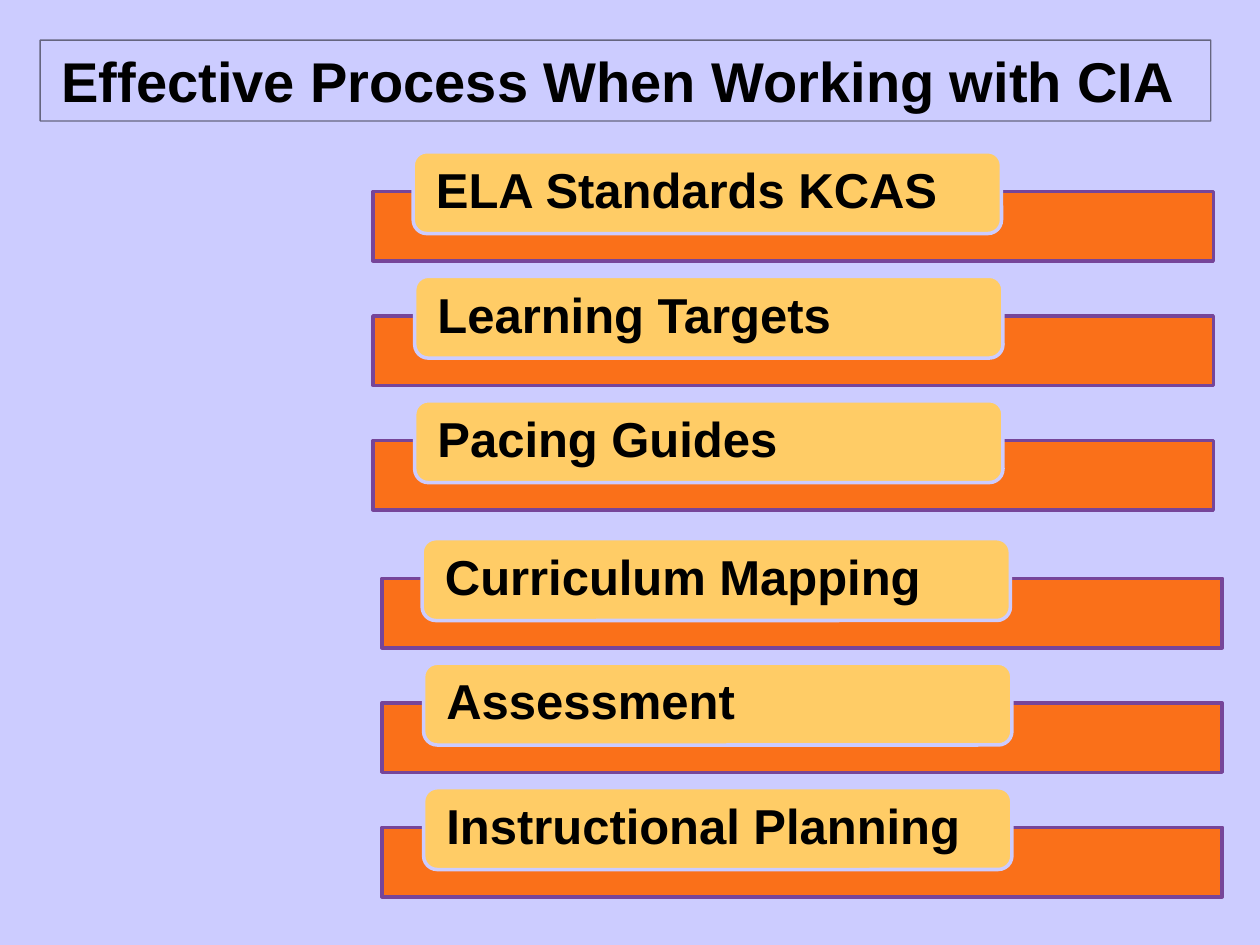
from lxml.etree import SubElement
from pptx import Presentation
from pptx.dml.color import RGBColor
from pptx.enum.shapes import MSO_SHAPE
from pptx.enum.text import MSO_ANCHOR, PP_ALIGN
from pptx.oxml.ns import qn
from pptx.util import Cm, Pt


def paint(color_format, color, opacity=100):
    """Set a colour, with its opacity in percent."""
    color_format.rgb = RGBColor.from_string(color)
    if opacity < 100:
        for element in color_format._xFill.iter(qn("a:srgbClr")):
            SubElement(element, qn("a:alpha"), val=str(opacity * 1000))


def write(shape, text, size):
    """Put one line of bold black Arial in a shape, centred vertically."""
    frame = shape.text_frame
    frame.text = text
    frame.word_wrap = True
    frame.vertical_anchor = MSO_ANCHOR.MIDDLE
    font = frame.paragraphs[0].runs[0].font
    font.name = "Arial"
    font.size = Pt(size)
    font.bold = True
    paint(font.color, "000000")
    return frame


deck = Presentation()
deck.slide_width, deck.slide_height = Cm(25.4), Cm(19.05)
page = deck.slides.add_slide(deck.slide_layouts[6])
page.background.fill.solid()
paint(page.background.fill.fore_color, "CCCCFF")

# Steps: two groups of three, each group with its own left and top
step_groups = [
    (7.52, 3.86, ["ELA Standards KCAS", "Learning Targets", "Pacing Guides"]),
    (7.7, 11.66, ["Curriculum Mapping", "Assessment", "Instructional Planning"]),
]
step_pitch = 2.51

for left, top, steps in step_groups:
    group = page.shapes.add_group_shape()
    for index, step in enumerate(steps):
        bar_top = top + index * step_pitch
        bar = group.shapes.add_shape(
            MSO_SHAPE.RECTANGLE, Cm(left), Cm(bar_top), Cm(16.94), Cm(1.4))
        label = group.shapes.add_shape(
            MSO_SHAPE.ROUNDED_RECTANGLE,
            Cm(left + (0.84 if index else 0.81)), Cm(bar_top - 0.8), Cm(11.86), Cm(1.65))
        for shape, fill, opacity, line in [
            (bar, "FF6600", 90, "764599"),
            (label, "FFCC66", 100, "CCCCFF"),
        ]:
            shape.shadow.inherit = False
            shape.fill.solid()
            paint(shape.fill.fore_color, fill, opacity)
            paint(shape.line.color, line)
            shape.line.width = Pt(2)

        frame = write(label, step, 28)
        frame.margin_left = frame.margin_right = Cm(0.38)
        frame.margin_top = frame.margin_bottom = 0
        paragraph = frame.paragraphs[0]
        paragraph.alignment = PP_ALIGN.LEFT
        paragraph.line_spacing = 0.9

# Title
title = page.shapes.add_textbox(Cm(0.81), Cm(0.81), Cm(23.6), Cm(1.63))
paint(title.line.color, "000000", 50)
title.line.width = Pt(0.75)
frame = write(title, "Effective Process When Working with CIA ", 32)
frame.paragraphs[0].alignment = PP_ALIGN.CENTER

deck.save("out.pptx")
